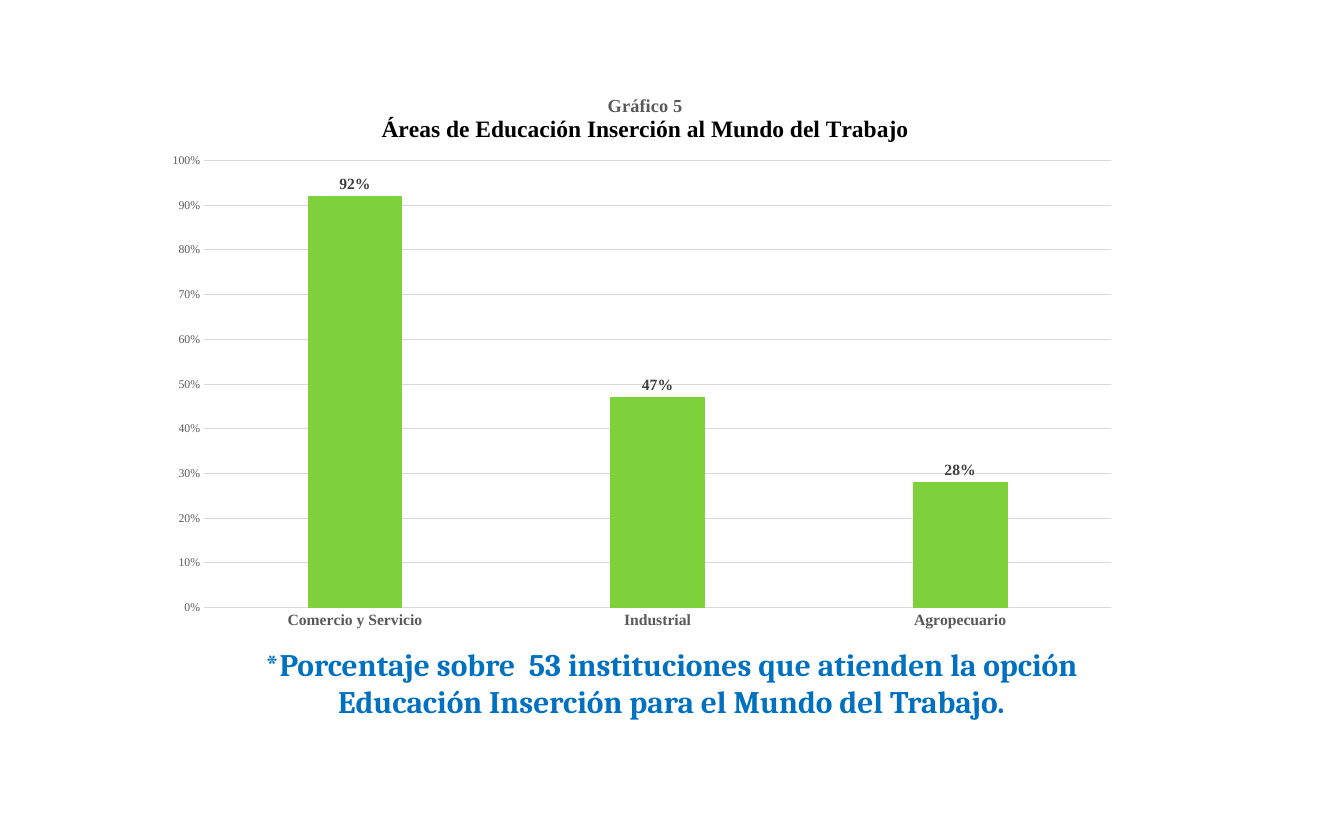
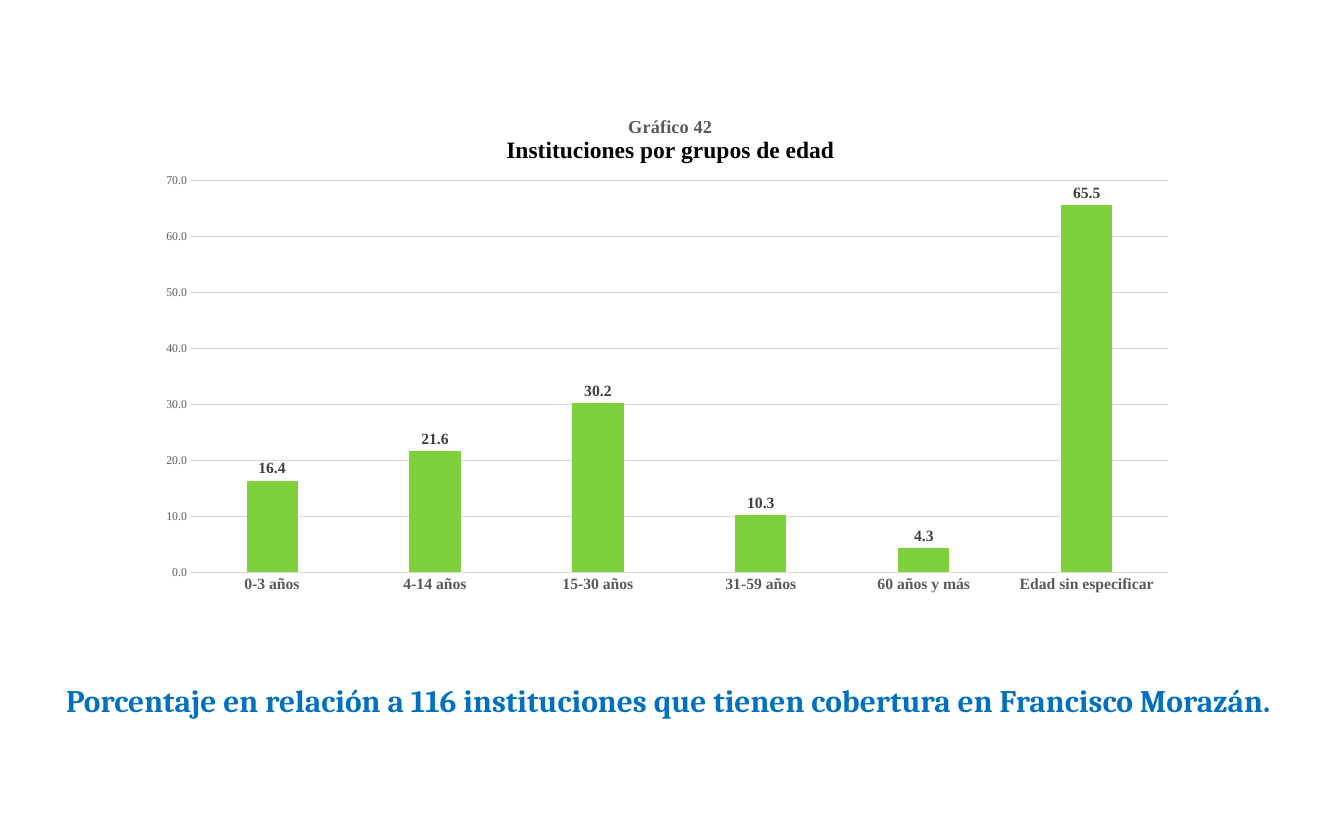
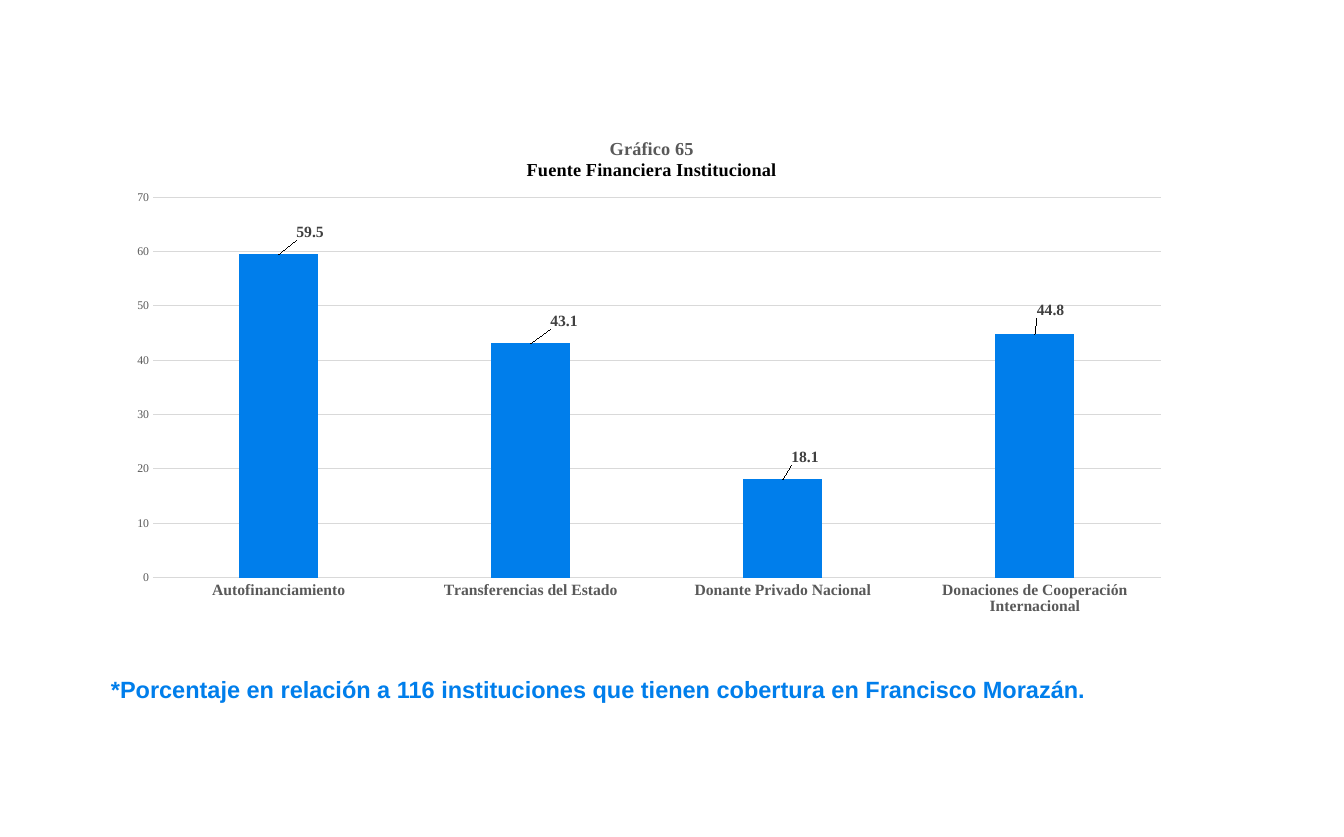
from lxml.etree import SubElement
from pptx import Presentation
from pptx.chart.data import CategoryChartData
from pptx.dml.color import RGBColor
from pptx.enum.chart import XL_CHART_TYPE, XL_LABEL_POSITION as POS, XL_TICK_MARK as TICK
from pptx.enum.text import MSO_AUTO_SIZE, PP_ALIGN
from pptx.oxml.ns import qn
from pptx.util import Pt

GREEN, BLUE, NOTE_BLUE = "7FD13B", "007EEB", "0070C0"
BLACK, DARK, GREY, RULE = "000000", "404040", "595959", "D9D9D9"
SERIF = "Times New Roman"


def style(font, size, color, bold=False, name=SERIF):
    font.name, font.size, font.bold = name, Pt(size), bold
    font.color.rgb = RGBColor.from_string(color)


def place(parent, index, target=None, **fractions):
    """Give a chart element a manual layout, in fractions of the chart."""
    for old in parent.findall(qn("c:layout")):
        parent.remove(old)
    layout = parent.makeelement(qn("c:layout"))
    parent.insert(index, layout)
    manual = SubElement(layout, qn("c:manualLayout"))
    settings = {"layoutTarget": target} if target else {}
    if "w" in fractions or parent.tag == qn("c:title"):
        settings.update(xMode="edge", yMode="edge")
    for tag, value in (settings | fractions).items():
        SubElement(manual, qn(f"c:{tag}")).set("val", str(value))


# Boxes are left, top, width, height on the slide; title is left, top.
slides = [
    dict(
        heading=["Gráfico 5", "Áreas de Educación Inserción al Mundo del Trabajo"],
        heading_size=18, title=(290, 70), box=(117.4, 54, 748, 436.3),
        plot=(156, 123, 695, 342.5), color=GREEN, overlap=-27,
        values={"Comercio y Servicio": 0.92, "Industrial": 0.47, "Agropecuario": 0.28},
        top=1, step=0.1, axis_format="0%", label_format="0%", shifts=[],
        note="*Porcentaje sobre  53 instituciones que atienden la opción "
             "Educación Inserción para el Mundo del Trabajo.",
        note_box=(181.4, 490.3, 665.3, 65.5), note_font=(24, NOTE_BLUE, True, "Cambria"),
        align=PP_ALIGN.CENTER),
    dict(
        heading=["Gráfico 42", "Instituciones por grupos de edad"],
        heading_size=18, title=(385.5, 86), box=(111.6, 70.6, 799.2, 391),
        plot=(146, 138, 748.5, 300.5), color=GREEN, overlap=-27,
        values={"0-3 años": 16.4, "4-14 años": 21.6, "15-30 años": 30.2,
                "31-59 años": 10.3, "60 años y más": 4.3, "Edad sin especificar": 65.5},
        top=70, step=10, axis_format="0.0", label_format="0.0", shifts=[],
        note="Porcentaje en relación a 116 instituciones que tienen cobertura "
             "en Francisco Morazán.",
        note_box=(32.4, 518.4, 958.3, 65.5), note_font=(24, NOTE_BLUE, True, "Cambria"),
        align=PP_ALIGN.CENTER),
    dict(
        heading=["Gráfico 65", "Fuente Financiera Institucional"],
        heading_size=14, title=(401, 103), box=(89.3, 87.8, 816.5, 391.7),
        plot=(117, 151, 772, 291.5), color=BLUE, overlap=0,
        values={"Autofinanciamiento": 59.5, "Transferencias del Estado": 43.1,
                "Donante Privado Nacional": 18.1,
                "Donaciones de Cooperación Internacional": 44.8},
        top=70, step=10, axis_format="##,##0", label_format="0.0",
        shifts=[(24, -8), (25.5, -8), (17, -8), (12, -9)],
        note="*Porcentaje en relación a 116 instituciones que tienen cobertura "
             "en Francisco Morazán.",
        note_box=(77.8, 513.4, 776.9, 28.8), note_font=(18, BLUE, True, "Arial"),
        align=PP_ALIGN.LEFT),
]

prs = Presentation()
prs.slide_width, prs.slide_height = Pt(1029), Pt(641)

for d in slides:
    s = prs.slides.add_slide(prs.slide_layouts[6])
    left, top, width, height = d["box"]

    data = CategoryChartData(number_format=d["label_format"])
    data.categories = list(d["values"])
    data.add_series("Series 1", list(d["values"].values()))
    chart = s.shapes.add_chart(XL_CHART_TYPE.COLUMN_CLUSTERED,
                               *map(Pt, d["box"]), data).chart
    chart.has_legend = False
    style(chart.font, 10, BLACK)

    tf = chart.chart_title.text_frame
    tf.text = "\n".join(d["heading"])
    for p, size, color in zip(tf.paragraphs, (14, d["heading_size"]), (GREY, BLACK)):
        p.alignment = PP_ALIGN.CENTER
        style(p.runs[0].font, size, color, True)
    x, y = d["title"]
    place(chart.chart_title._element, 1,
          x=round((x - left) / width, 4), y=round((y - top) / height, 4))

    x, y, w, h = d["plot"]
    place(chart._chartSpace.find(".//" + qn("c:plotArea")), 0, "inner",
          x=round((x - left) / width, 4), y=round((y - top) / height, 4),
          w=round(w / width, 4), h=round(h / height, 4))

    cat, val = chart.category_axis, chart.value_axis
    style(cat.tick_labels.font, 12, GREY, True)
    style(val.tick_labels.font, 9, GREY)
    for axis in (cat, val):
        axis.major_tick_mark = axis.minor_tick_mark = TICK.NONE
    val.format.line.fill.background()
    for line in (cat.format.line, val.major_gridlines.format.line):
        line.color.rgb = RGBColor.from_string(RULE)
        line.width = Pt(0.75)
    val.minimum_scale, val.maximum_scale, val.major_unit = 0, d["top"], d["step"]
    val.tick_labels.number_format = d["axis_format"]
    val.tick_labels.number_format_is_linked = False

    plot = chart.plots[0]
    plot.gap_width, plot.overlap, plot.vary_by_categories = 219, d["overlap"], False
    series = plot.series[0]
    series.format.fill.solid()
    series.format.fill.fore_color.rgb = RGBColor.from_string(d["color"])
    labels = series.data_labels
    labels.show_value = True
    labels.number_format, labels.number_format_is_linked = d["label_format"], False
    labels.position = POS.OUTSIDE_END
    style(labels.font, 12, DARK, True)
    for i, (dx, dy) in enumerate(d["shifts"]):
        label = series.points[i].data_label
        style(label.font, 12, DARK, True)
        label.position = POS.OUTSIDE_END
        place(labels._element.findall(qn("c:dLbl"))[i], 1,
              x=round(dx / width, 4), y=round(dy / height, 4))

    tf = s.shapes.add_textbox(*map(Pt, d["note_box"])).text_frame
    tf.word_wrap = True
    tf.auto_size = MSO_AUTO_SIZE.SHAPE_TO_FIT_TEXT
    tf.text = d["note"]
    p = tf.paragraphs[0]
    p.alignment = d["align"]
    style(p.runs[0].font, *d["note_font"])

prs.save("out.pptx")
